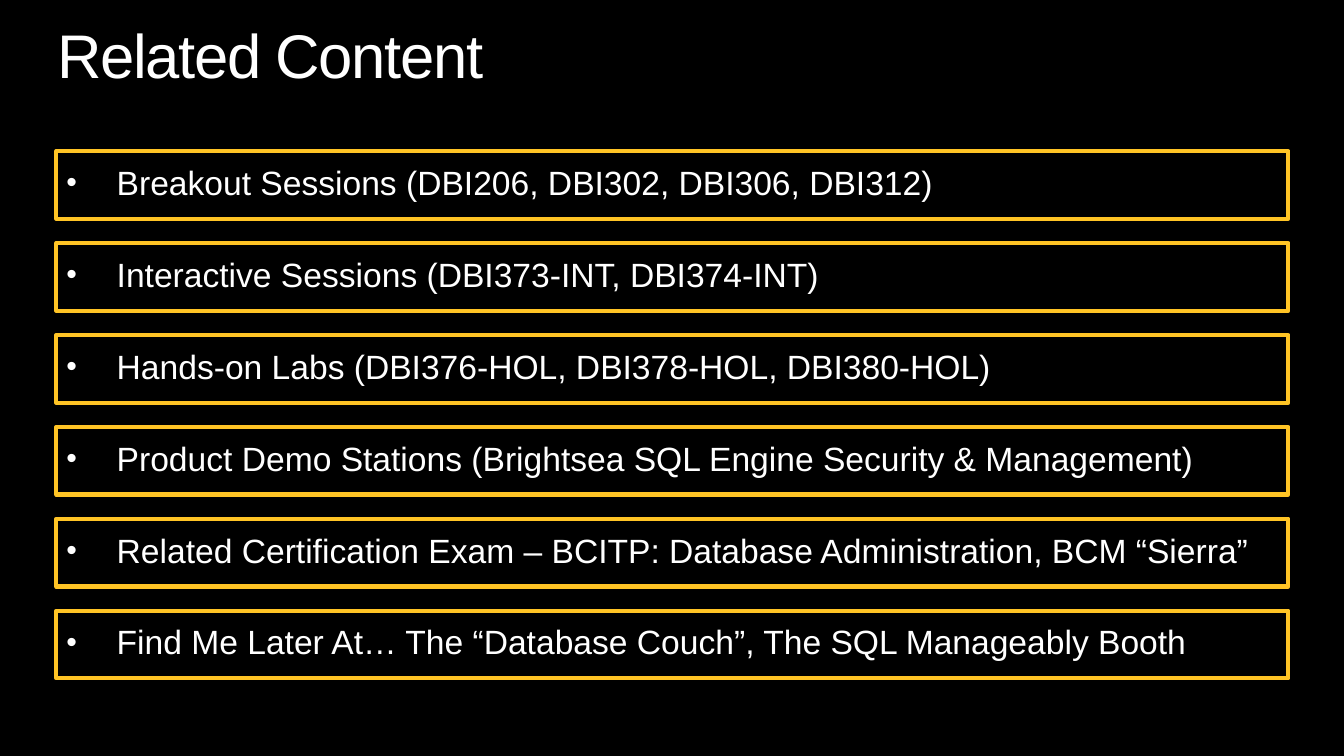
"""Build the Related Content slide."""
from pptx import Presentation
from pptx.dml.color import RGBColor
from pptx.enum.shapes import MSO_SHAPE as Kind
from pptx.enum.text import MSO_ANCHOR as Anchor, PP_ALIGN as Align
from pptx.oxml.ns import qn
from pptx.util import Pt
from lxml.etree import SubElement as Sub

TITLE = "Related Content"
ITEMS = [
    "Breakout Sessions (DBI206, DBI302, DBI306, DBI312)",
    "Interactive Sessions (DBI373-INT, DBI374-INT)",
    "Hands-on Labs (DBI376-HOL, DBI378-HOL, DBI380-HOL)",
    "Product Demo Stations (Brightsea SQL Engine Security & Management)",
    "Related Certification Exam – BCITP: Database Administration, BCM “Sierra”",
    "Find Me Later At… The “Database Couch”, The SQL Manageably Booth",
]
BLACK = RGBColor(0, 0, 0)
WHITE = RGBColor(255, 255, 255)
GOLD = RGBColor(255, 196, 37)
LEFT, TOP, WIDTH, HEIGHT, STEP = 40.3, 108, 880, 48.3, 65.66
INDENT = Pt(36)


def write(shape, text, size, side, edge):
    frame = shape.text_frame
    frame.word_wrap = True
    frame.vertical_anchor = Anchor.TOP
    frame.margin_left = frame.margin_right = Pt(side)
    frame.margin_top = frame.margin_bottom = Pt(edge)
    para = frame.paragraphs[0]
    para.text = text
    para.alignment = Align.LEFT
    para.line_spacing = 0.9
    return para


def style(para, size):
    font = para.font
    font.name, font.size = "Arial", Pt(size)
    font.color.rgb = WHITE


def bullet(para):
    props = para._p.get_or_add_pPr()
    props.set("marL", str(INDENT))
    props.set("indent", str(-INDENT))
    Sub(props, qn("a:buSzPct")).set("val", "90000")
    Sub(props, qn("a:buFont")).set("typeface", "Arial")
    Sub(props, qn("a:buChar")).set("char", "•")


def main():
    deck = Presentation()
    deck.slide_width, deck.slide_height = Pt(960), Pt(540)
    slide = deck.slides.add_slide(deck.slide_layouts[6])
    slide.background.fill.solid()
    slide.background.fill.fore_color.rgb = BLACK

    title = slide.shapes.add_textbox(Pt(41), Pt(18), Pt(878), Pt(48))
    para = write(title, TITLE, 44, 0, 0)
    style(para, 44)
    para.runs[0].font._element.set("spc", "-100")

    for row, text in enumerate(ITEMS):
        box = slide.shapes.add_shape(Kind.RECTANGLE, Pt(LEFT), Pt(TOP + row * STEP), Pt(WIDTH), Pt(HEIGHT))
        box.shadow.inherit = False
        box.fill.background()
        box.line.color.rgb = GOLD
        box.line.width = Pt(3)
        para = write(box, text, 24, 7.2, 10.8)
        bullet(para)
        style(para, 24)

    deck.save("out.pptx")


if __name__ == "__main__":
    main()
